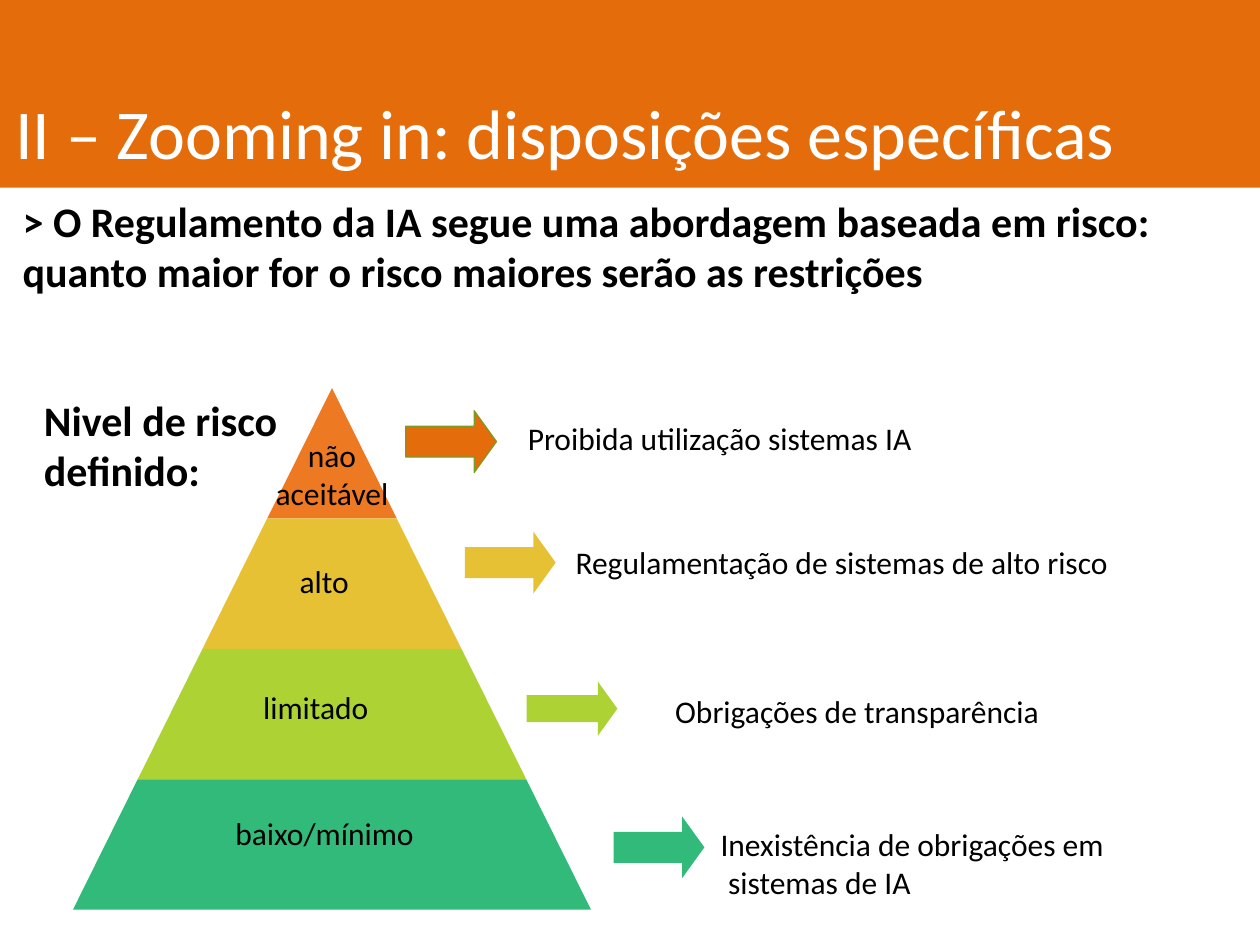
from dataclasses import dataclass

from lxml import etree
from pptx import Presentation
from pptx.dml.color import RGBColor
from pptx.enum.shapes import MSO_SHAPE
from pptx.enum.text import MSO_ANCHOR, MSO_AUTO_SIZE, PP_ALIGN
from pptx.oxml.ns import qn
from pptx.util import Inches, Pt

FONT = "Calibri"
ORANGE = "E46C0A"
BLACK = "000000"
APEX_X = 2.635
APEX_Y = 3.08
LEVEL_HEIGHT = 1.035
HALF_STEP = 0.514
ARROW_WIDTH = 0.72


@dataclass
class Label:
    lines: list[str]
    left: float
    top: float
    width: float
    align: PP_ALIGN = PP_ALIGN.LEFT
    hanging: float = 0


@dataclass
class Arrow:
    left: float
    top: float
    height: float
    color: str
    outline: str | None = None


@dataclass
class RiskLevel:
    color: str
    name: Label
    arrow: Arrow
    consequence: Label


LEVELS = [
    RiskLevel(
        "EE7923",
        Label(["não", "aceitável"], 2.08, 3.41, 1.11, PP_ALIGN.CENTER),
        Arrow(3.22, 3.26, 0.49, ORANGE, "7C9B22"),
        Label(["Proibida utilização sistemas IA"], 4.09, 3.28, 3.28),
    ),
    RiskLevel(
        "E6C133",
        Label(["alto"], 2.28, 4.41, 0.6),
        Arrow(3.69, 4.22, 0.49, "E6C133"),
        Label(["Regulamentação de sistemas de alto risco"], 4.47, 4.26, 4.47),
    ),
    RiskLevel(
        "ACD333",
        Label(["limitado"], 1.99, 5.41, 1.05),
        Arrow(4.18, 5.41, 0.43, "ACD333"),
        Label(["Obrigações de transparência"], 5.26, 5.44, 3.12),
    ),
    RiskLevel(
        "31BA79",
        Label(["baixo/mínimo"], 1.77, 6.41, 1.63),
        Arrow(4.87, 6.48, 0.49, "31BA79"),
        Label(["Inexistência de obrigações em", "sistemas de IA"],
              5.62, 6.5, 3.28, hanging=0.06),
    ),
]


def rgb(color: str) -> RGBColor:
    return RGBColor.from_string(color)


def set_font(paragraph, size: float, color: str = BLACK, bold: bool = False) -> None:
    font = paragraph.font
    font.name, font.size, font.bold = FONT, Pt(size), bold
    font.color.rgb = rgb(color)


def place(shape, left: float, top: float, width: float, height: float) -> None:
    shape.left, shape.top = Inches(left), Inches(top)
    shape.width, shape.height = Inches(width), Inches(height)


def paint(shape, color: str, outline: str | None = None) -> None:
    shape.shadow.inherit = False
    shape.fill.solid()
    shape.fill.fore_color.rgb = rgb(color)
    if outline:
        shape.line.color.rgb = rgb(outline)
        shape.line.width = Pt(0.72)
    else:
        shape.line.fill.background()


def add_title(slide) -> None:
    title = slide.shapes.title
    place(title, 0, 0, 10, 1.49)
    title.fill.solid()
    title.fill.fore_color.rgb = rgb(ORANGE)
    frame = title.text_frame
    frame.text = "II – Zooming in: disposições específicas"
    frame.auto_size = MSO_AUTO_SIZE.NONE
    frame.vertical_anchor = MSO_ANCHOR.BOTTOM
    frame.margin_left, frame.margin_right = Inches(0.12), 0
    frame.margin_top, frame.margin_bottom = 0, Inches(0.11)
    paragraph = frame.paragraphs[0]
    paragraph.alignment = PP_ALIGN.LEFT
    set_font(paragraph, 40, "FFFFFF")


def add_statement(slide) -> None:
    body = slide.placeholders[1]
    place(body, 0.08, 1.5, 9.83, 0.91)
    frame = body.text_frame
    frame.text = ("> O Regulamento da IA segue uma abordagem baseada em risco: "
                  "quanto maior for o risco maiores serão as restrições")
    frame.auto_size = MSO_AUTO_SIZE.NONE
    paragraph = frame.paragraphs[0]
    properties = paragraph._p.get_or_add_pPr()
    properties.set("marL", "0")
    properties.set("indent", "0")
    etree.SubElement(properties, qn("a:buNone"))
    paragraph.space_before = Pt(0)
    set_font(paragraph, 24, bold=True)


def add_label(slide, label: Label, size: float = 18, bold: bool = False,
              wrap: bool = False, height: float | None = None) -> None:
    height = height or 0.1 + 0.3 * len(label.lines)
    box = slide.shapes.add_textbox(Inches(label.left), Inches(label.top),
                                   Inches(label.width), Inches(height))
    frame = box.text_frame
    frame.text = "\n".join(label.lines)
    frame.word_wrap = wrap
    for index, paragraph in enumerate(frame.paragraphs):
        paragraph.alignment = label.align
        if index and label.hanging:
            paragraph._p.get_or_add_pPr().set("marL", str(Inches(label.hanging)))
        set_font(paragraph, size, bold=bold)


def add_arrow(slide, arrow: Arrow) -> None:
    shape = slide.shapes.add_shape(
        MSO_SHAPE.RIGHT_ARROW, Inches(arrow.left), Inches(arrow.top),
        Inches(ARROW_WIDTH), Inches(arrow.height))
    shape.adjustments[0] = 0.5
    shape.adjustments[1] = 0.36
    paint(shape, arrow.color, arrow.outline)


def add_pyramid_level(slide, index: int, color: str) -> None:
    half_width = HALF_STEP * (index + 1)
    kind = MSO_SHAPE.TRAPEZOID if index else MSO_SHAPE.ISOSCELES_TRIANGLE
    shape = slide.shapes.add_shape(
        kind, Inches(APEX_X - half_width), Inches(APEX_Y + index * LEVEL_HEIGHT),
        Inches(2 * half_width), Inches(LEVEL_HEIGHT))
    shape.adjustments[0] = HALF_STEP / LEVEL_HEIGHT if index else 0.5
    paint(shape, color)


def main() -> None:
    presentation = Presentation()
    presentation.slide_width, presentation.slide_height = Inches(10), Inches(7.5)
    slide = presentation.slides.add_slide(presentation.slide_layouts[1])
    add_title(slide)
    add_statement(slide)
    add_label(slide, Label(["Nivel de risco definido:"], 0.25, 3.08, 2.08),
              size=24, bold=True, wrap=True, height=0.91)
    for index, level in enumerate(LEVELS):
        add_pyramid_level(slide, index, level.color)
        add_arrow(slide, level.arrow)
    for level in LEVELS:
        add_label(slide, level.name)
        add_label(slide, level.consequence)
    presentation.save("out.pptx")


if __name__ == "__main__":
    main()
